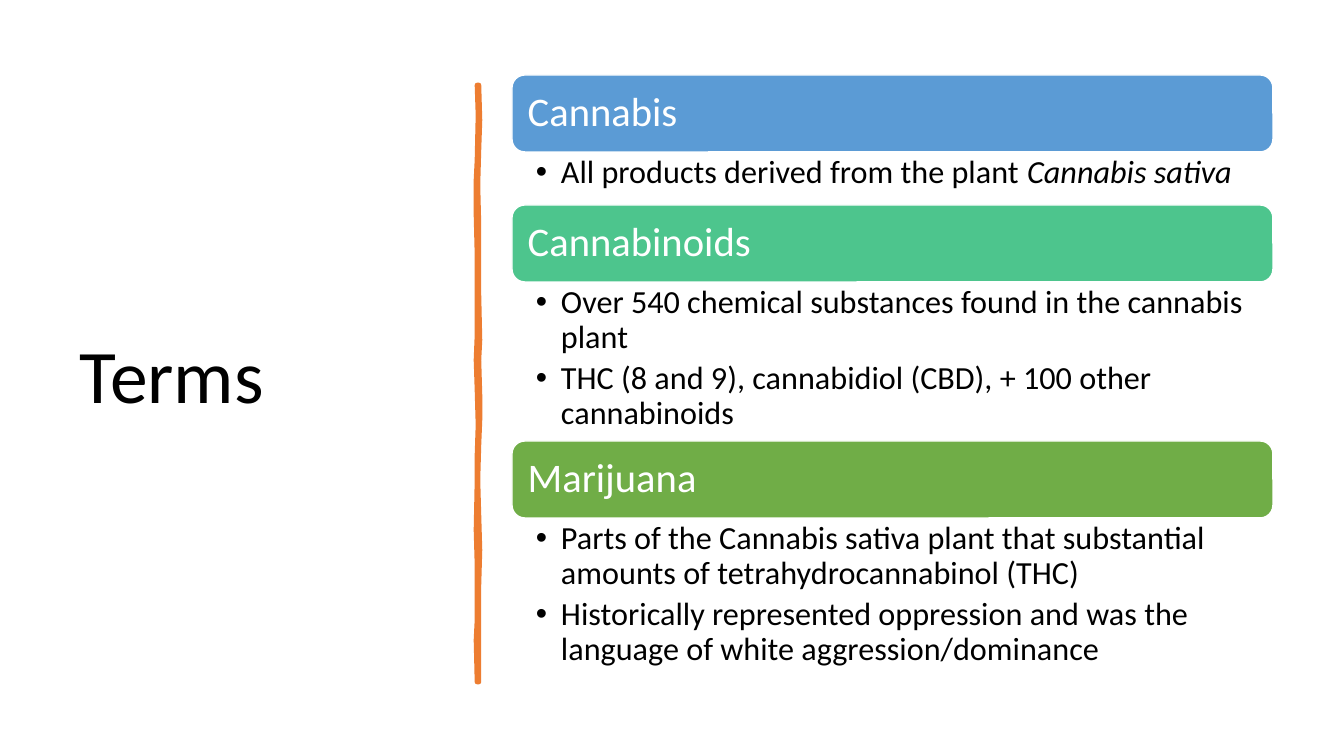
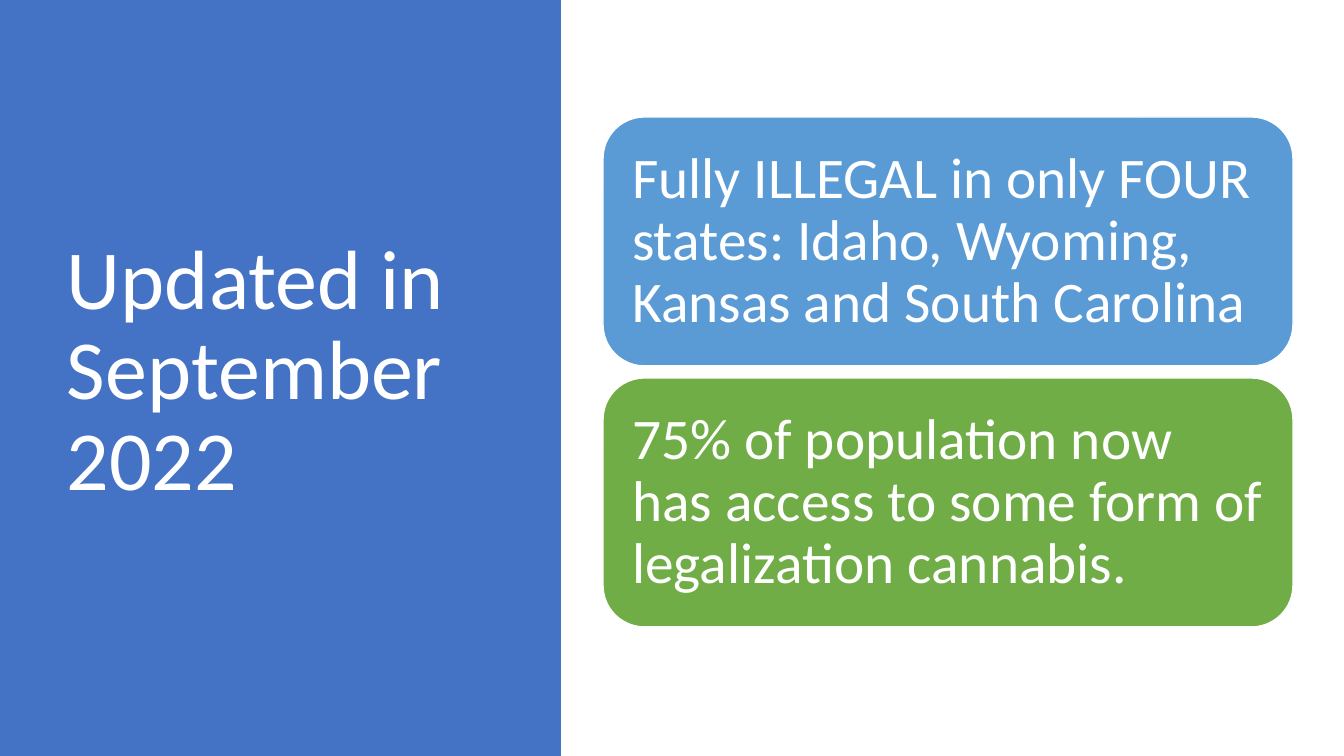
import pptx
import pptx.util
import pptx.dml.color
import pptx.enum.shapes
import pptx.enum.text
import pptx.oxml.ns
import lxml.etree

EMU_PER_PX = 914400 / 100.8
SLIDE_W, SLIDE_H = 1344, 756
FONT = "Calibri"
COLORS = {
    "black": "000000",
    "white": "FFFFFF",
    "panel": "4472C4",
    "blue": "5B9BD5",
    "teal": "4DC58D",
    "green": "70AD47",
    "orange": "ED7D31",
}

TERMS = [
    ("Cannabis", "blue", 53, ["All products derived from the plant *Cannabis sativa*"]),
    ("Cannabinoids", "teal", 159, [
        "Over 540 chemical substances found in the cannabis plant",
        "THC (8 and 9), cannabidiol (CBD), + 100 other cannabinoids",
    ]),
    ("Marijuana", "green", 159, [
        "Parts of the Cannabis sativa plant that substantial amounts of tetrahydrocannabinol (THC)",
        "Historically represented oppression and was the language of white aggression/dominance",
    ]),
]
FACTS = [
    ("Fully ILLEGAL in only FOUR states: Idaho, Wyoming, Kansas and South Carolina", "blue"),
    ("75% of population now has access to some form of legalization cannabis.", "green"),
]
STROKE_RIGHT = [(3, 0), (4, 35), (3, 65), (2, 100), (3, 140), (3, 210), (4, 255), (3, 275),
                (4, 310), (4, 335), (3, 360), (2, 395), (3, 430), (4, 465), (3, 500),
                (3, 545), (3, 597)]
STROKE_LEFT = [(1, 597), (0, 555), (1, 535), (1, 480), (0, 445), (1, 395), (1, 370), (2, 340),
               (1, 305), (0, 275), (1, 250), (1, 170), (0, 130), (0, 95), (1, 75),
               (2, 30), (1, 0)]


def px(length):
    return pptx.util.Emu(round(length * EMU_PER_PX))


def rgb(name):
    return pptx.dml.color.RGBColor.from_string(COLORS[name])


def add_bullet(paragraph, hang):
    properties = paragraph._p.get_or_add_pPr()
    properties.set("marL", str(px(hang)))
    properties.set("indent", str(-px(hang)))
    tag = pptx.oxml.ns.qn
    lxml.etree.SubElement(properties, tag("a:buFont"), typeface="Arial")
    lxml.etree.SubElement(properties, tag("a:buChar"), char="•")


def write(frame, text, size, color="white", insets=(10, 5, 10, 5), middle=True,
          bullet_hang=0, space_after=0):
    frame.word_wrap = True
    frame.margin_left, frame.margin_top, frame.margin_right, frame.margin_bottom = map(px, insets)
    anchors = pptx.enum.text.MSO_ANCHOR
    frame.vertical_anchor = anchors.MIDDLE if middle else anchors.TOP
    for index, line in enumerate([text] if isinstance(text, str) else text):
        paragraph = frame.add_paragraph() if index else frame.paragraphs[0]
        paragraph.alignment = pptx.enum.text.PP_ALIGN.LEFT
        paragraph.line_spacing = 0.9
        paragraph.space_after = pptx.util.Pt(space_after)
        if bullet_hang:
            add_bullet(paragraph, bullet_hang)
        for part, words in enumerate(line.split("*")):
            if words:
                run = paragraph.add_run()
                run.text = words
                run.font.name = FONT
                run.font.size = pptx.util.Pt(size)
                run.font.color.rgb = rgb(color)
                run.font.italic = part % 2 == 1


def add_text(slide, box, text, **style):
    write(slide.shapes.add_textbox(*map(px, box)).text_frame, text, **style)


def paint(shape, fill, line=None, width=1):
    shape.shadow.inherit = False
    shape.fill.solid()
    shape.fill.fore_color.rgb = rgb(fill)
    if line:
        shape.line.color.rgb = rgb(line)
        shape.line.width = pptx.util.Pt(width)
    else:
        shape.line.fill.background()


def add_card(slide, box, text, fill, size, inset):
    kind = pptx.enum.shapes.MSO_SHAPE.ROUNDED_RECTANGLE
    card = slide.shapes.add_shape(kind, *map(px, box))
    paint(card, fill, "white")
    write(card.text_frame, text, size=size, insets=(inset,) * 4)


def add_brush_stroke(slide, left, top):
    first, *rest = [(left + x, top + y) for x, y in STROKE_RIGHT + STROKE_LEFT]
    builder = slide.shapes.build_freeform(*first, scale=EMU_PER_PX)
    builder.add_line_segments(rest, close=True)
    stroke = builder.convert_to_shape()
    paint(stroke, "orange", "orange", 3.25)
    lxml.etree.SubElement(stroke.line._get_or_add_ln(), pptx.oxml.ns.qn("a:round"))


def add_terms(slide, left, top, width):
    header_height = 77
    for term, fill, body_height, points in TERMS:
        add_card(slide, (left, top, width, header_height), term, fill, size=29, inset=12)
        top += header_height
        add_text(slide, (left, top, width, body_height), points, size=23, color="black",
                 insets=(24, 4, 23, 4), middle=False, bullet_hang=25, space_after=4.6)
        top += body_height


def add_facts(slide, left, top, width, height):
    gap = 12
    card_height = (height - gap * (len(FACTS) - 1)) // len(FACTS)
    for index, (fact, fill) in enumerate(FACTS):
        card_top = top + index * (card_height + gap)
        add_card(slide, (left, card_top, width, card_height), fact, fill, size=41, inset=17)


def build_terms_slide(slide):
    add_text(slide, (70, 71, 377, 616), "Terms", size=54, color="black")
    add_brush_stroke(slide, 476, 85)
    add_terms(slide, 512, 75, 761)


def build_update_slide(slide):
    kind = pptx.enum.shapes.MSO_SHAPE.RECTANGLE
    panel = slide.shapes.add_shape(kind, 0, 0, px(561), px(SLIDE_H))
    paint(panel, "panel")
    add_text(slide, (57, 69, 419, 607), "Updated in September 2022", size=60)
    add_facts(slide, 603, 117, 690, 510)


def main():
    deck = pptx.Presentation()
    deck.slide_width, deck.slide_height = px(SLIDE_W), px(SLIDE_H)
    for build in (build_terms_slide, build_update_slide):
        build(deck.slides.add_slide(deck.slide_layouts[6]))
    deck.save("out.pptx")


if __name__ == "__main__":
    main()
